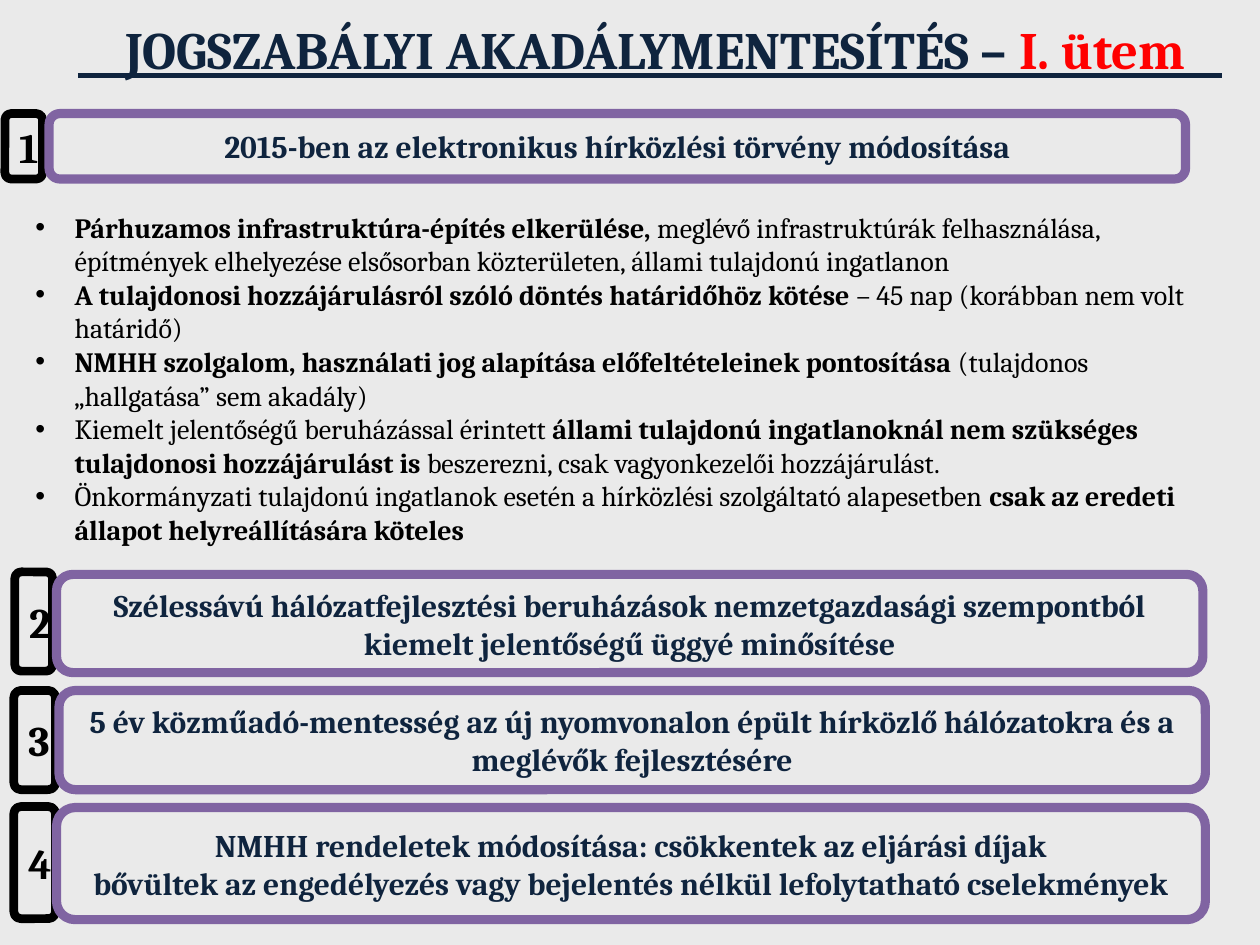
from lxml.etree import SubElement
from pptx import Presentation
from pptx.dml.color import RGBColor
from pptx.enum.shapes import MSO_CONNECTOR, MSO_SHAPE
from pptx.enum.text import MSO_ANCHOR, MSO_AUTO_SIZE, PP_ALIGN
from pptx.oxml.ns import qn
from pptx.util import Cm, Pt

BACKGROUND = RGBColor(0xEA, 0xEA, 0xEA)
NAVY = RGBColor(0x0F, 0x24, 0x3E)
RED = RGBColor(0xFF, 0x00, 0x00)
PURPLE = RGBColor(0x80, 0x64, 0xA2)
BLACK = RGBColor(0x00, 0x00, 0x00)

TITLE = [(" JOGSZABÁLYI AKADÁLYMENTESÍTÉS – ", NAVY), ("I. ütem", RED)]

# Each measure is a list of (text, bold) pieces.
MEASURES = [
    [("Párhuzamos infrastruktúra-építés elkerülése, ", True),
     ("meglévő infrastruktúrák felhasználása, építmények elhelyezése "
      "elsősorban közterületen, állami tulajdonú ingatlanon", False)],
    [("A tulajdonosi hozzájárulásról szóló döntés határidőhöz kötése ", True),
     ("– 45 nap (korábban nem volt határidő)", False)],
    [("NMHH szolgalom, használati jog alapítása előfeltételeinek pontosítása ", True),
     ("(tulajdonos „hallgatása” sem akadály)", False)],
    [("Kiemelt jelentőségű beruházással érintett ", False),
     ("állami tulajdonú ingatlanoknál nem szükséges tulajdonosi hozzájárulást is ", True),
     ("beszerezni, csak vagyonkezelői hozzájárulást.", False)],
    [("Önkormányzati tulajdonú ingatlanok esetén a hírközlési szolgáltató "
      "alapesetben ", False),
     ("csak az eredeti állapot helyreállítására köteles", True)],
]

# Badge and banner boxes are (left, top, width, height) in centimetres.
STEPS = [
    ((0.1, 2.29, 0.76, 1.32), (0.99, 2.29, 22.91, 1.32),
     ["2015-ben az elektronikus hírközlési törvény módosítása"]),
    ((0.3, 11.53, 0.76, 2), (1.14, 11.58, 23.11, 1.98),
     ["Szélessávú hálózatfejlesztési beruházások nemzetgazdasági szempontból "
      "kiemelt jelentőségű üggyé minősítése"]),
    ((0.28, 13.92, 0.84, 2), (1.19, 13.92, 23.11, 2),
     ["5 év közműadó-mentesség az új nyomvonalon épült hírközlő hálózatokra "
      "és a meglévők fejlesztésére"]),
    ((0.28, 16.26, 0.84, 2.26), (1.14, 16.28, 23.16, 2.26),
     ["NMHH rendeletek módosítása: csökkentek az eljárási díjak",
      "bővültek az engedélyezés vagy bejelentés nélkül lefolytatható cselekmények"]),
]


def add_text(paragraph, text, *, size, color=BLACK, bold=True, font="Cambria"):
    run = paragraph.add_run()
    run.text = text
    run.font.name = font
    run.font.size = Pt(size)
    run.font.bold = bold
    run.font.color.rgb = color


def paragraphs(frame, count):
    """Yield the frame's first paragraph, then new ones up to count."""
    for index in range(count):
        paragraph = frame.add_paragraph() if index else frame.paragraphs[0]
        paragraph.space_before = Pt(0)
        yield paragraph


class SlideBuilder:
    def __init__(self, slide):
        self.slide = slide
        fill = slide.background.fill
        fill.solid()
        fill.fore_color.rgb = BACKGROUND

    def place(self, placeholder, box, anchor):
        placeholder.left, placeholder.top, placeholder.width, placeholder.height = map(Cm, box)
        frame = placeholder.text_frame
        frame.word_wrap = True
        frame.auto_size = MSO_AUTO_SIZE.NONE
        frame.vertical_anchor = anchor
        return frame

    def title(self, pieces, box):
        frame = self.place(self.slide.shapes.title, box, MSO_ANCHOR.MIDDLE)
        for paragraph in paragraphs(frame, 1):
            paragraph.alignment = PP_ALIGN.CENTER
            for text, color in pieces:
                add_text(paragraph, text, size=30, color=color)

    def bullets(self, items, box):
        frame = self.place(self.slide.placeholders[1], box, MSO_ANCHOR.TOP)
        for paragraph, pieces in zip(paragraphs(frame, len(items)), items):
            properties = paragraph._p.get_or_add_pPr()
            properties.set("marL", str(Cm(0.79)))
            properties.set("indent", str(-Cm(0.79)))
            SubElement(properties, qn("a:buFont"), typeface="Arial")
            SubElement(properties, qn("a:buChar"), char="•")
            for text, bold in pieces:
                add_text(paragraph, text, size=16, bold=bold)

    def rule(self, left, right, y):
        line = self.slide.shapes.add_connector(
            MSO_CONNECTOR.STRAIGHT, Cm(left), Cm(y), Cm(right), Cm(y))
        line.line.color.rgb = NAVY
        line.line.width = Pt(3)
        SubElement(line._element.spPr, qn("a:effectLst"))

    def frame_box(self, box, lines, *, border, border_width, size, color):
        shape = self.slide.shapes.add_shape(MSO_SHAPE.ROUNDED_RECTANGLE, *map(Cm, box))
        shape.shadow.inherit = False
        shape.fill.background()
        shape.line.color.rgb = border
        shape.line.width = Pt(border_width)
        frame = shape.text_frame
        frame.word_wrap = True
        frame.vertical_anchor = MSO_ANCHOR.MIDDLE
        for paragraph, text in zip(paragraphs(frame, len(lines)), lines):
            paragraph.alignment = PP_ALIGN.CENTER
            add_text(paragraph, text, size=size, color=color)

    def step(self, number, badge, banner, lines):
        self.frame_box(badge, [str(number)], border=BLACK, border_width=5,
                       size=24, color=BLACK)
        self.frame_box(banner, lines, border=PURPLE, border_width=5.25,
                       size=18, color=NAVY)


def main():
    presentation = Presentation()
    presentation.slide_width = Cm(25.4)
    presentation.slide_height = Cm(19.05)
    builder = SlideBuilder(presentation.slides.add_slide(presentation.slide_layouts[1]))
    builder.title(TITLE, (0.99, 0.2, 24.21, 1.55))
    builder.rule(1.57, 24.64, 1.52)
    builder.bullets(MEASURES, (0.46, 4.11, 24.49, 6.86))
    for number, (badge, banner, lines) in enumerate(STEPS, start=1):
        builder.step(number, badge, banner, lines)
    presentation.save("out.pptx")


if __name__ == "__main__":
    main()
